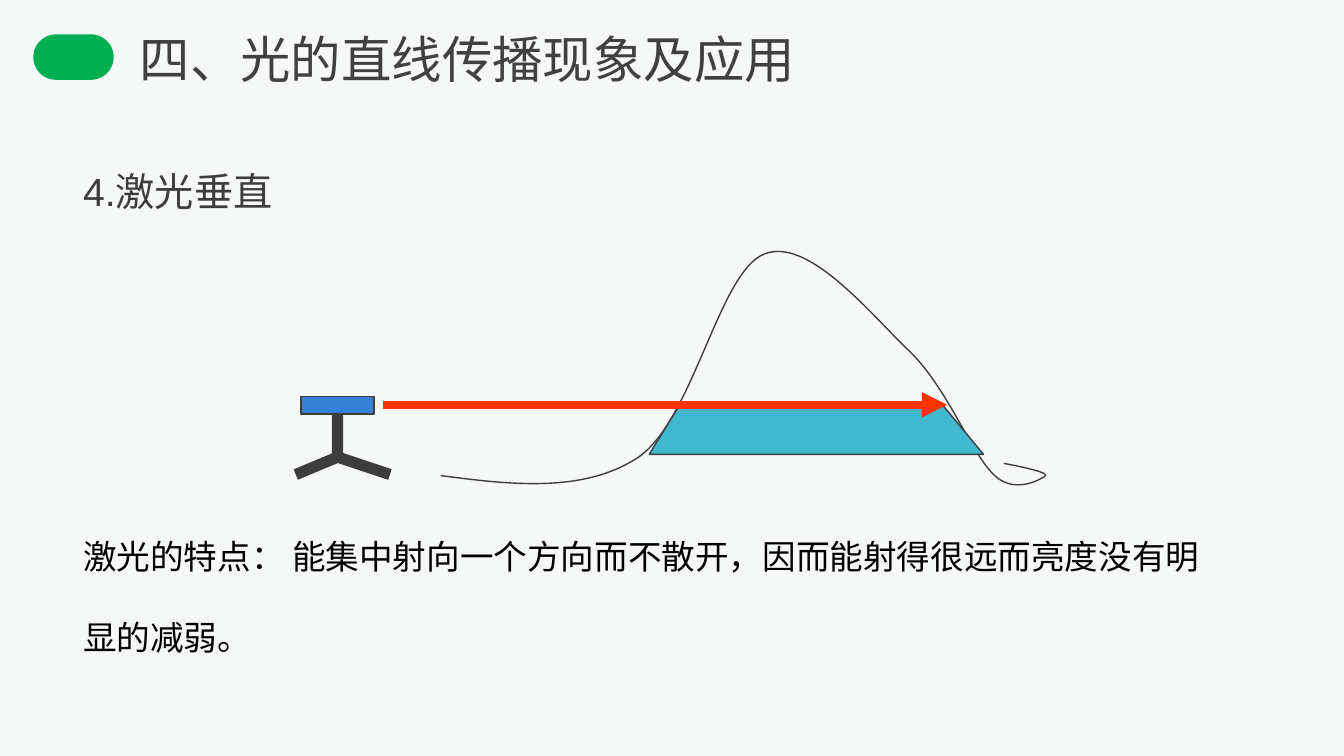
from dataclasses import dataclass

from lxml import etree
from pptx import Presentation
from pptx.dml.color import RGBColor as RGB
from pptx.enum.shapes import MSO_CONNECTOR as CONN, MSO_SHAPE as SHAPE
from pptx.enum.text import MSO_AUTO_SIZE as AUTO
from pptx.oxml.ns import qn
from pptx.util import Cm, Pt


@dataclass(frozen=True)
class Theme:
    font: str = "Arial"
    back: RGB = RGB(0xF6, 0xF8, 0xF8)
    green: RGB = RGB(0x00, 0xB0, 0x50)
    title: RGB = RGB(0x40, 0x40, 0x40)
    dark: RGB = RGB(0x3D, 0x3D, 0x3D)
    black: RGB = RGB(0, 0, 0)
    water: RGB = RGB(0x41, 0xB7, 0xD0)
    laser: RGB = RGB(0x37, 0x80, 0xD7)
    beam: RGB = RGB(0xFF, 0x33, 0x00)
    title_size: Pt = Pt(27)
    head_size: Pt = Pt(21)
    body_size: Pt = Pt(18)
    thin: Pt = Pt(0.75)
    leg: Pt = Pt(6)
    ray: Pt = Pt(4.5)


T = Theme()
prs = Presentation()
prs.slide_width, prs.slide_height = Cm(25.4), Cm(14.29)
s = prs.slides.add_slide(prs.slide_layouts[6])
s.background.fill.solid()
s.background.fill.fore_color.rgb = T.back


def add_text(text, *, box, size, color, spacing=None):
    tf = s.shapes.add_textbox(*map(Cm, box)).text_frame
    tf.word_wrap = True
    tf.auto_size = AUTO.SHAPE_TO_FIT_TEXT
    tf.margin_left = tf.margin_right = Cm(0.19)
    tf.margin_top = tf.margin_bottom = Cm(0.1)
    p = tf.paragraphs[0]
    p.line_spacing = spacing
    r = p.add_run()
    r.text = text
    r.font.name, r.font.size, r.font.color.rgb = T.font, size, color


def paint(sp, fill=None, line=None):
    sp.shadow.inherit = False
    if fill is None:
        sp.fill.background()
    else:
        sp.fill.solid()
        sp.fill.fore_color.rgb = fill
    if line is None:
        sp.line.fill.background()
    else:
        sp.line.color.rgb, sp.line.width = line, T.thin


# Title marker
marker = s.shapes.add_shape(SHAPE.ROUNDED_RECTANGLE, Cm(0.63), Cm(0.65), Cm(1.52), Cm(0.86))
marker.adjustments[0] = 0.5
paint(marker, T.green)

# Heading and explanation
add_text("4.激光垂直", box=(1.38, 3.07, 8.92, 1.09), size=T.head_size, color=T.dark)
add_text("激光的特点： 能集中射向一个方向而不散开，因而能射得很远而亮度没有明显的减弱。",
         box=(1.38, 9.27, 22.07, 3.28), size=T.body_size, color=T.black, spacing=2.0)

# Hill: a start, then two controls and an end point for each cubic curve
hill_points = [
    (8.33, 8.99),
    (9.68, 9.17), (11.05, 9.32), (12.07, 8.64),
    (13.11, 7.92), (13.59, 5.13), (14.45, 4.8),
    (15.29, 4.47), (16.48, 5.97), (17.2, 6.65),
    (17.93, 7.37), (18.36, 8.59), (18.8, 8.99),
    (19.2, 9.37), (19.74, 9.02), (19.76, 8.99),
    (19.81, 8.94), (19.41, 8.84), (18.97, 8.76),
]
water_points = [(12.85, 7.65), (12.27, 8.59), (18.59, 8.59), (17.81, 7.65), (12.85, 7.65)]

# Hill outline and the water in front of it
scene = s.shapes.add_group_shape().shapes
outlines = []
for points, closed, fill in ((hill_points, False, None), (water_points, True, T.water)):
    first, *rest = [(Cm(x), Cm(y)) for x, y in points]
    fb = scene.build_freeform(*first)
    fb.add_line_segments(rest, close=closed)
    outline = fb.convert_to_shape()
    paint(outline, fill, T.dark)
    outlines.append(outline)

# Join each three hill segments into one cubic curve
hill = outlines[0]
segments = list(hill._element.iter(qn("a:lnTo")))
for i in range(0, len(segments), 3):
    curve = etree.Element(qn("a:cubicBezTo"))
    segments[i].addprevious(curve)
    for segment in segments[i:i + 3]:
        curve.append(segment[0])
        segment.getparent().remove(segment)

# Laser
laser = scene.add_shape(SHAPE.RECTANGLE, Cm(5.69), Cm(7.49), Cm(1.38), Cm(0.34))
paint(laser, T.laser, T.dark)

# Tripod and beam
hub = (6.38, 8.64)
lines = [
    ((6.38, 7.83), hub, T.dark, T.leg),
    (hub, (5.59, 8.97), T.dark, T.leg),
    (hub, (7.37, 8.97), T.dark, T.leg),
    ((7.24, 7.65), (17.9, 7.65), T.beam, T.ray),
]
connectors = []
for begin, end, color, width in lines:
    cn = scene.add_connector(CONN.STRAIGHT, *map(Cm, begin + end))
    cn.line.color.rgb, cn.line.width = color, width
    etree.SubElement(cn._element.spPr, qn("a:effectLst"))
    connectors.append(cn)
post, *legs, beam = connectors
post.begin_connect(laser, 2)
etree.SubElement(beam.line._get_or_add_ln(), qn("a:tailEnd"), type="triangle")

# Title
add_text("四、光的直线传播现象及应用", box=(2.45, 0.43, 12.83, 1.35),
         size=T.title_size, color=T.title)

prs.save("out.pptx")
